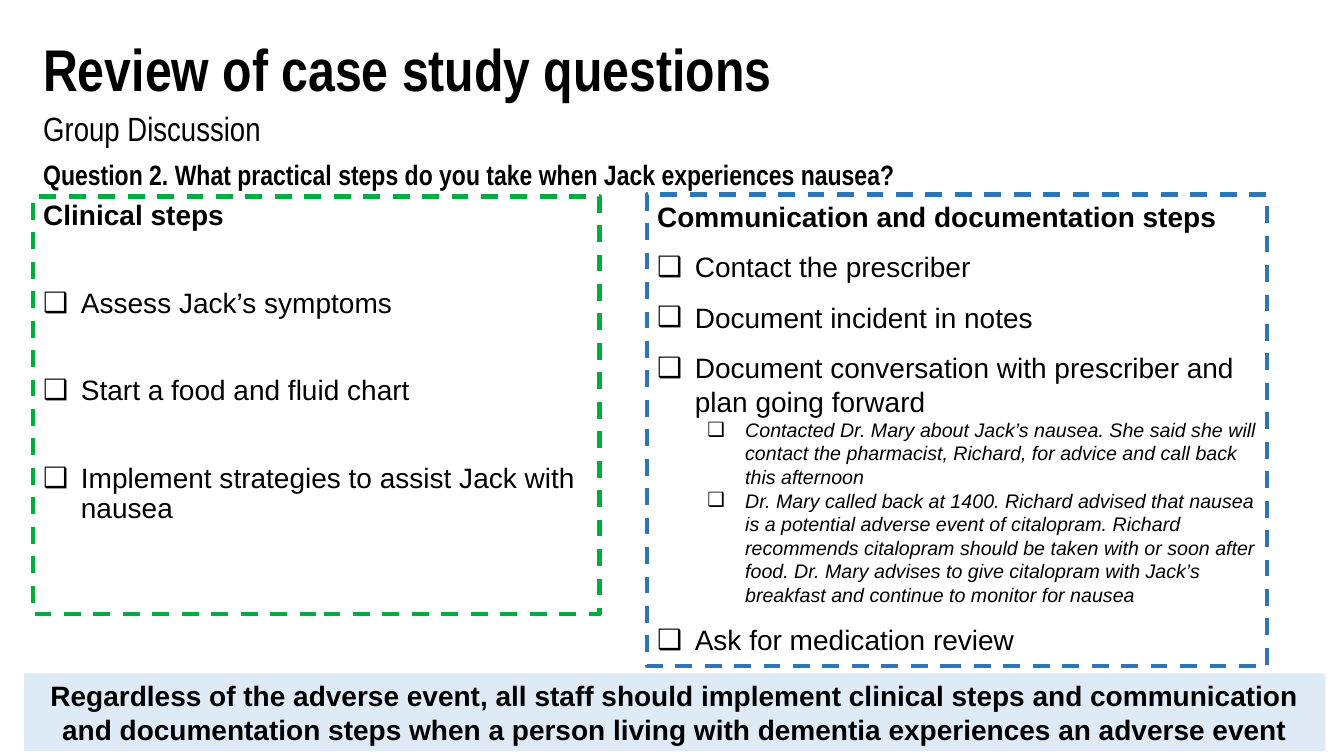
from lxml import etree
from pptx import Presentation
from pptx import util as u
from pptx.dml.color import RGBColor
from pptx.enum import dml, shapes, text
from pptx.oxml import ns

COLOURS = {"text": "000000", "clinical": "00AC3E", "communication": "2E75B6", "banner": "DEEBF7"}
LEFT = 0.84
HANGING = 0.95
HEADING = {"size": 20, "bold": True}
STEP = {"size": 20, "bullet": 0.95}
NOTE = {"size": 14, "italic": True, "bullet": 2.22, "level": 1}


def colour(name):
    """Return the named colour."""
    return RGBColor.from_string(COLOURS[name])


def add_bullet(paragraph, margin):
    """Give a paragraph a hanging checkbox bullet."""
    properties = paragraph._p.get_or_add_pPr()
    properties.set("marL", str(u.Cm(margin)))
    properties.set("indent", str(-u.Cm(HANGING)))
    etree.SubElement(properties, ns.qn("a:buFont"), typeface="Arial")
    etree.SubElement(properties, ns.qn("a:buChar"), char="❑")


def write(shape, items, font="Arial", spacing=1.0, align=text.PP_ALIGN.LEFT):
    """Write (wording, format, space before) items as paragraphs."""
    frame = shape.text_frame
    frame.word_wrap = True
    frame.vertical_anchor = text.MSO_ANCHOR.TOP
    for index, (wording, style, before) in enumerate(items):
        paragraph = frame.add_paragraph() if index else frame.paragraphs[0]
        layout = {"alignment": align, "line_spacing": spacing, "space_before": u.Pt(before),
                  "level": style.get("level", 0)}
        for name, value in layout.items():
            setattr(paragraph, name, value)
        if "bullet" in style:
            add_bullet(paragraph, style["bullet"])
        run = paragraph.add_run()
        run.text = wording
        values = {"name": font, "size": u.Pt(style["size"]), "bold": style.get("bold", False),
                  "italic": style.get("italic", False)}
        for name, value in values.items():
            setattr(run.font, name, value)
        run.font.color.rgb = colour("text")


def add_heading(slide, box, wording, size, bold):
    """Add one line of narrow heading text."""
    shape = slide.shapes.add_textbox(*map(u.Cm, box))
    write(shape, [(wording, {"size": size, "bold": bold}, 0)], "Arial Narrow", 0.9)


def add_panel(slide, box, fill=None, outline=None):
    """Add a rectangle with an optional fill or dashed outline."""
    shape = slide.shapes.add_shape(shapes.MSO_SHAPE.RECTANGLE, *map(u.Cm, box))
    shape.shadow.inherit = False
    if fill:
        shape.fill.solid()
        shape.fill.fore_color.rgb = colour(fill)
    else:
        shape.fill.background()
    if outline:
        shape.line.color.rgb = colour(outline)
        shape.line.width = u.Pt(3)
        shape.line.dash_style = dml.MSO_LINE.DASH
    else:
        shape.line.fill.background()
    return shape


def main():
    """Build the case study slide."""
    presentation = Presentation()
    presentation.slide_width, presentation.slide_height = u.Cm(33.87), u.Cm(19.05)
    slide = presentation.slides.add_slide(presentation.slide_layouts[6])

    add_heading(slide, (LEFT, 0.91, 28.14, 2.06), "Review of case study questions", 42, True)
    add_heading(slide, (LEFT, 2.72, 20.7, 1.3), "Group Discussion", 24, False)
    add_heading(slide, (LEFT, 3.94, 30.02, 1.04),
                "Question 2. What practical steps do you take when Jack experiences nausea?", 20, True)

    clinical = add_panel(slide, (LEFT, 4.95, 14.27, 10.52), outline="clinical")
    write(clinical, [
        ("Clinical steps", HEADING, 0),
        ("Assess Jack’s symptoms", STEP, 41),
        ("Start a food and fluid chart", STEP, 41),
        ("Implement strategies to assist Jack with nausea", STEP, 41),
    ], spacing=0.9)

    communication = add_panel(slide, (16.31, 4.9, 15.62, 11.89), outline="communication")
    write(communication, [
        ("Communication and documentation steps", HEADING, 0),
        ("Contact the prescriber", STEP, 12),
        ("Document incident in notes", STEP, 12),
        ("Document conversation with prescriber and plan going forward", STEP, 12),
        ("Contacted Dr. Mary about Jack’s nausea. She said she will contact the pharmacist, "
         "Richard, for advice and call back this afternoon", NOTE, 0),
        ("Dr. Mary called back at 1400. Richard advised that nausea is a potential adverse event "
         "of citalopram. Richard recommends citalopram should be taken with or soon after food. "
         "Dr. Mary advises to give citalopram with Jack’s breakfast and continue to monitor "
         "for nausea", NOTE, 0),
        ("Ask for medication review", STEP, 12),
    ])

    banner = add_panel(slide, (0.61, 16.97, 32.79, 1.96), fill="banner")
    write(banner, [
        ("Regardless of the adverse event, all staff should implement clinical steps and "
         "communication and documentation steps when a person living with dementia "
         "experiences an adverse event", HEADING, 0),
    ], align=text.PP_ALIGN.CENTER)
    presentation.save("out.pptx")


if __name__ == "__main__":
    main()
